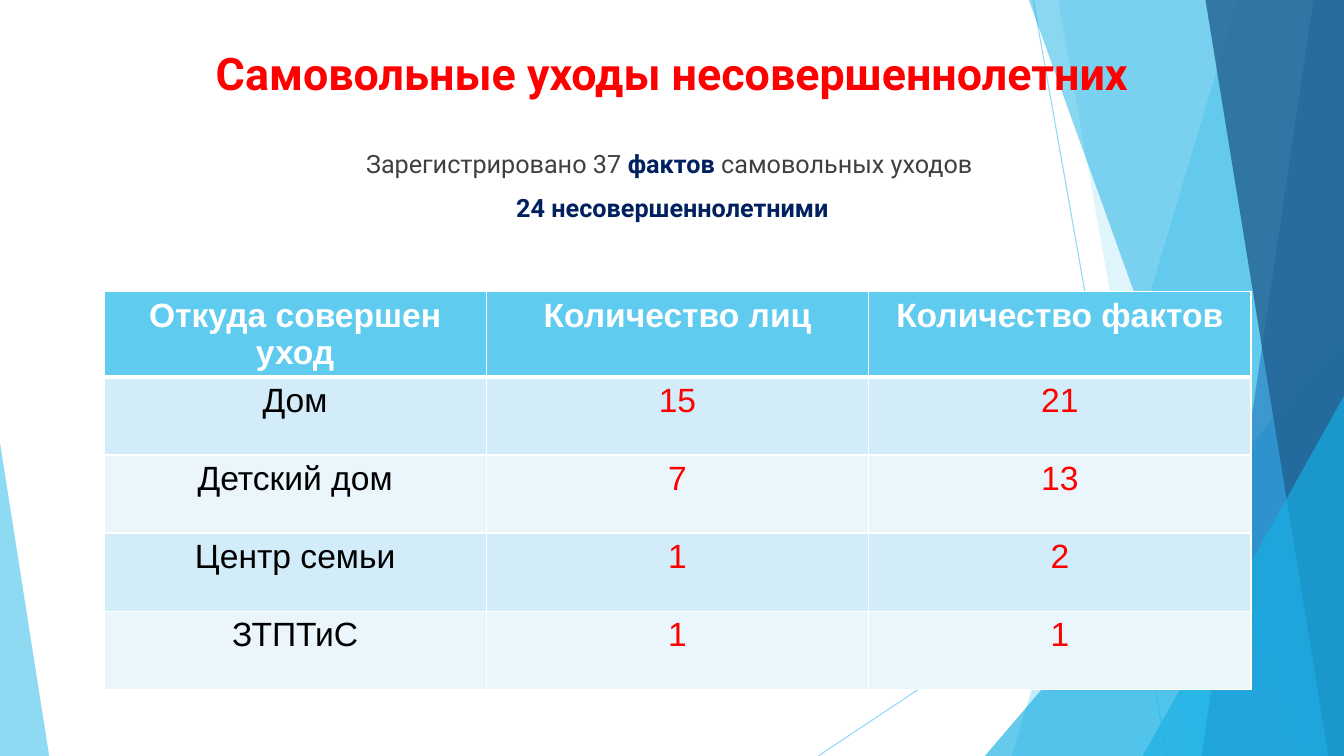
from dataclasses import dataclass
from typing import NamedTuple

from lxml.etree import SubElement
from pptx import Presentation
from pptx.dml.color import RGBColor
from pptx.enum.shapes import MSO_CONNECTOR, MSO_SHAPE
from pptx.enum.text import MSO_ANCHOR, MSO_AUTO_SIZE, PP_ALIGN
from pptx.oxml.ns import qn
from pptx.util import Cm, Pt


@dataclass(frozen=True)
class Theme:
    sky: str = "5FCBEF"
    azure: str = "17B0E4"
    blue: str = "2E83C3"
    deep: str = "226292"
    navy: str = "002060"
    red: str = "FF0000"
    gray: str = "404040"
    black: str = "000000"
    white: str = "FFFFFF"
    bands: tuple = ("D2ECF9", "EAF6FC")
    text_font: str = "Roboto"
    table_font: str = "Arial"
    title_size: int = 32
    body_size: int = 18
    table_size: int = 24


class Box(NamedTuple):
    left: float
    top: float
    width: float
    height: float


THEME = Theme()
PAGE = Box(0, 0, 33.87, 19.05)
TITLE = Box(2.34, 1.02, 29.21, 2.18)
BODY = Box(2.34, 3.61, 29.21, 13.56)
TABLE = Box(2.62, 7.35, 28.91, 10)
HEADER_HEIGHT = 2.12

HEADERS = ("Откуда совершен уход", "Количество лиц", "Количество фактов")
DEPARTURES = (
    ("Дом", "15", "21"),
    ("Детский дом", "7", "13"),
    ("Центр семьи", "1", "2"),
    ("ЗТПТиС", "1", "1"),
)


def apply_format(target, values):
    for name, value in values.items():
        setattr(target, name, value)


def place(shape, box):
    apply_format(shape, {name: Cm(value) for name, value in box._asdict().items()})


def add_run(paragraph, text, color, **font_values):
    run = paragraph.add_run()
    run.text = text
    apply_format(run.font, font_values)
    run.font.color.rgb = RGBColor.from_string(color)


def set_opacity(shape, percent):
    for color in shape.element.iter(qn("a:srgbClr")):
        SubElement(color, qn("a:alpha"), val=str(percent * 1000))


def paint(shape, color, opacity):
    shape.shadow.inherit = False
    shape.fill.solid()
    shape.fill.fore_color.rgb = RGBColor.from_string(color)
    shape.line.fill.background()
    set_opacity(shape, opacity)


def add_ray(shapes, box, start, end):
    points = [Cm(offset + value) for point in (start, end)
              for offset, value in zip(box[:2], point)]
    ray = shapes.add_connector(MSO_CONNECTOR.STRAIGHT, *points)
    ray.line.width = Pt(0.75)
    ray.line.color.rgb = RGBColor.from_string(THEME.sky)
    SubElement(ray.element.spPr, qn("a:effectLst"))
    set_opacity(ray, 70)


def add_ribbon(shapes, box, upper, lower, color, opacity):
    right, bottom = box.left + box.width, box.top + box.height
    corners = [(box.left + upper, box.top), (right, box.top),
               (right, bottom), (box.left + lower, bottom)]
    points = [(Cm(x), Cm(y)) for x, y in corners]
    builder = shapes.build_freeform(*points[0])
    builder.add_line_segments(points[1:], close=True)
    paint(builder.convert_to_shape(), color, opacity)


def add_wedge(shapes, box, left, top, width, apex, color, opacity):
    wedge = shapes.add_shape(MSO_SHAPE.ISOSCELES_TRIANGLE, 0, 0, 0, 0)
    place(wedge, Box(box.left + left, box.top + top, width, box.height - top))
    wedge.adjustments[0] = apex
    paint(wedge, color, opacity)


def draw_backdrop(slide, box):
    group = slide.shapes.add_group_shape()
    shapes = group.shapes
    add_ray(shapes, box, (26.04, 0), (29.41, box.height))
    add_ray(shapes, box, (box.width, 10.24), (20.62, box.height))
    add_ribbon(shapes, box, 31.19, 25.5, THEME.sky, 36)
    add_ribbon(shapes, box, 26.67, 30.05, THEME.sky, 20)
    add_wedge(shapes, box, 24.82, 8.46, box.width - 24.82, 1, THEME.azure, 66)
    add_ribbon(shapes, box, 25.93, 32.79, THEME.azure, 50)
    add_ribbon(shapes, box, 33.1, 30.28, THEME.blue, 70)
    add_ribbon(shapes, box, 30.38, 33.48, THEME.deep, 80)
    add_wedge(shapes, box, 28.8, 9.98, box.width - 28.8, 1, THEME.azure, 66)
    add_wedge(shapes, box, 0, 11.15, 1.24, 0, THEME.sky, 70)
    group.element.getparent().insert(2, group.element)


def prepare_placeholder(shape, box):
    place(shape, box)
    apply_format(shape.text_frame, {
        "word_wrap": True,
        "auto_size": MSO_AUTO_SIZE.NONE,
        "vertical_anchor": MSO_ANCHOR.TOP,
    })
    return shape.text_frame


def write_title(slide, box):
    paragraph = prepare_placeholder(slide.shapes.title, box).paragraphs[0]
    paragraph.alignment = PP_ALIGN.CENTER
    add_run(paragraph, "Самовольные уходы несовершеннолетних", THEME.red,
            name=THEME.text_font, size=Pt(THEME.title_size), bold=True)


def write_body(slide, box):
    frame = prepare_placeholder(slide.placeholders[1], box)
    lines = (
        (("Зарегистрировано 37", False), (" фактов ", True),
         ("самовольных уходов ", False)),
        (("24 несовершеннолетними", True),),
    )
    for index, line in enumerate(lines):
        paragraph = frame.add_paragraph() if index else frame.paragraphs[0]
        apply_format(paragraph, {"alignment": PP_ALIGN.CENTER, "space_before": Pt(10)})
        properties = paragraph._p.get_or_add_pPr()
        for name in ("marL", "indent"):
            properties.set(name, "0")
        SubElement(properties, qn("a:buNone"))
        for text, strong in line:
            add_run(paragraph, text, THEME.navy if strong else THEME.gray,
                    name=THEME.text_font, size=Pt(THEME.body_size), bold=strong)


def set_borders(cell, widths):
    properties = cell._tc.get_or_add_tcPr()
    for side, width in widths.items():
        line = SubElement(properties, qn(f"a:ln{side}"), w=str(Pt(width)))
        fill = SubElement(line, qn("a:solidFill"))
        SubElement(fill, qn("a:srgbClr"), val=THEME.white)


def fill_cell(cell, text, row, column):
    header = row == 0
    set_borders(cell, {"L": 1, "R": 1, "T": 3 if row == 1 else 1, "B": 3 if header else 1})
    cell.fill.solid()
    background = THEME.sky if header else THEME.bands[(row - 1) % 2]
    cell.fill.fore_color.rgb = RGBColor.from_string(background)
    color = THEME.white if header else THEME.red if column else THEME.black
    paragraph = cell.text_frame.paragraphs[0]
    paragraph.alignment = PP_ALIGN.CENTER
    add_run(paragraph, text, color, name=THEME.table_font,
            size=Pt(THEME.table_size), bold=header)


def draw_table(slide, box):
    rows = (HEADERS, *DEPARTURES)
    lengths = [Cm(value) for value in box]
    table = slide.shapes.add_table(len(rows), len(HEADERS), *lengths).table
    for column in table.columns:
        column.width = Cm(box.width / len(HEADERS))
    for row, texts in enumerate(rows):
        height = (box.height - HEADER_HEIGHT) / len(DEPARTURES) if row else HEADER_HEIGHT
        table.rows[row].height = Cm(height)
        for column, text in enumerate(texts):
            fill_cell(table.cell(row, column), text, row, column)


def main():
    presentation = Presentation()
    apply_format(presentation, {"slide_width": Cm(PAGE.width), "slide_height": Cm(PAGE.height)})
    slide = presentation.slides.add_slide(presentation.slide_layouts[1])
    draw_backdrop(slide, PAGE)
    write_title(slide, TITLE)
    write_body(slide, BODY)
    draw_table(slide, TABLE)
    presentation.save("out.pptx")


if __name__ == "__main__":
    main()
